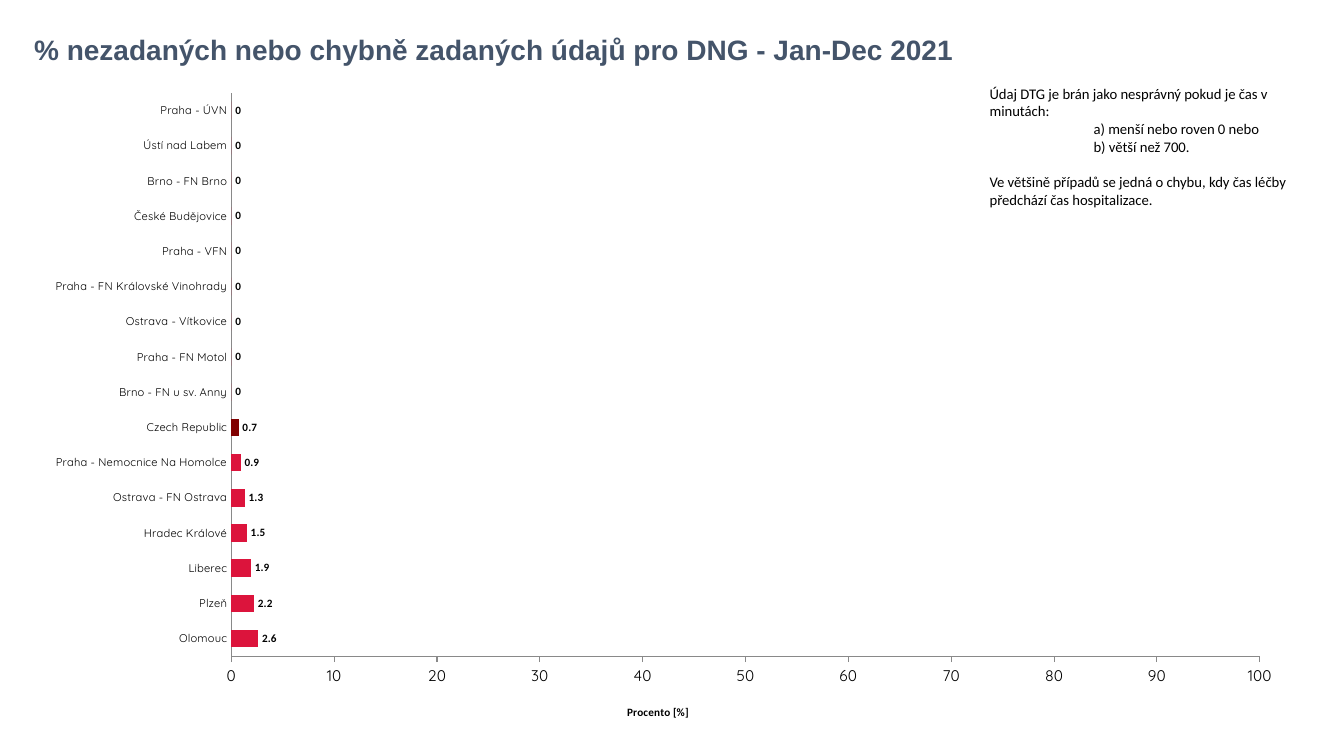
from lxml.etree import SubElement
from pptx import Presentation
from pptx.chart.data import CategoryChartData
from pptx.dml.color import RGBColor
from pptx.enum.chart import XL_CHART_TYPE, XL_LABEL_POSITION, XL_TICK_MARK
from pptx.enum.text import MSO_ANCHOR
from pptx.oxml.ns import qn
from pptx.util import Cm, Pt

RATES = [
    ("Olomouc", 2.6),
    ("Plzeň", 2.2),
    ("Liberec", 1.9),
    ("Hradec Králové", 1.5),
    ("Ostrava - FN Ostrava", 1.3),
    ("Praha - Nemocnice Na Homolce", 0.9),
    ("Czech Republic", 0.7),
    ("Brno - FN u sv. Anny", 0),
    ("Praha - FN Motol", 0),
    ("Ostrava - Vítkovice", 0),
    ("Praha - FN Královské Vinohrady", 0),
    ("Praha - VFN", 0),
    ("České Budějovice", 0),
    ("Brno - FN Brno", 0),
    ("Ústí nad Labem", 0),
    ("Praha - ÚVN", 0),
]
NOTES = [
    ("Údaj DTG je brán jako nesprávný pokud je čas v minutách:", 0, 0),
    ("a) menší nebo roven 0 nebo", 2.62, 0),
    ("b) větší než 700.", 2.62, 0),
    ("Ve většině případů se jedná o chybu, kdy čas léčby předchází čas hospitalizace.", 0, 12.6),
]


def color(code):
    return RGBColor.from_string(code)


def style(font, name, size, code="000000", bold=False):
    font.name, font.size, font.bold = name, Pt(size), bold
    font.color.rgb = color(code)


def place(owner, index, **sizes):
    layout = owner.find(qn("c:layout"))
    if layout is None:
        layout = SubElement(owner, qn("c:layout"))
        owner.insert(index, layout)
    manual = SubElement(layout, qn("c:manualLayout"))
    if "w" in sizes:
        SubElement(manual, qn("c:layoutTarget")).set("val", "inner")
    for axis in "xy":
        SubElement(manual, qn(f"c:{axis}Mode")).set("val", "edge")
    for key, value in sizes.items():
        SubElement(manual, qn(f"c:{key}")).set("val", str(value))


def add_title(slide, box):
    frame = slide.shapes.add_textbox(*box).text_frame
    frame.word_wrap = True
    frame.vertical_anchor = MSO_ANCHOR.MIDDLE
    frame.text = "% nezadaných nebo chybně zadaných údajů pro DNG - Jan-Dec 2021"
    line = frame.paragraphs[0]
    line.line_spacing = 0.9
    style(line.runs[0].font, "Arial", 20, "44546A", True)


def add_rates(slide, box):
    data = CategoryChartData()
    data.categories = [name for name, rate in RATES]
    data.add_series("Series 1", [rate for name, rate in RATES])
    chart = slide.shapes.add_chart(XL_CHART_TYPE.BAR_CLUSTERED, *box, data).chart
    chart.has_legend = chart.has_title = False
    style(chart.font, "Calibri", 18)
    area = chart._chartSpace.find(".//" + qn("c:plotArea"))
    place(area, 0, x=0.16, y=0.02, w=0.81, h=0.86)

    plot = chart.plots[0]
    plot.gap_width = 100
    plot.vary_by_categories = False
    bars = plot.series[0]
    bars.format.fill.solid()
    bars.format.fill.fore_color.rgb = color("4472C4")
    for i, (name, rate) in enumerate(RATES):
        fill = bars.points[i].format.fill
        fill.solid()
        fill.fore_color.rgb = color("800000" if name == "Czech Republic" else "DC143C")
    labels = bars.data_labels
    labels.show_value = True
    labels.position = XL_LABEL_POSITION.OUTSIDE_END
    style(labels.font, "Calibri", 8, bold=True)

    names, scale = chart.category_axis, chart.value_axis
    for axis, size, tick in (
        (names, 8, XL_TICK_MARK.NONE),
        (scale, 11, XL_TICK_MARK.OUTSIDE),
    ):
        axis.has_major_gridlines = False
        axis.major_tick_mark = tick
        axis.minor_tick_mark = XL_TICK_MARK.NONE
        axis.format.line.color.rgb = color("898989")
        axis.format.line.width = Pt(0.75)
        style(axis.tick_labels.font, "Quicksand", size)
    scale.minimum_scale, scale.maximum_scale, scale.major_unit = 0, 100, 10
    title = scale.axis_title
    title.text_frame.text = "Procento [%]"
    style(title.text_frame.paragraphs[0].runs[0].font, "Calibri", 8, bold=True)
    place(title._element, 1, x=0.47, y=0.95)


def add_notes(slide, box):
    frame = slide.shapes.add_textbox(*box).text_frame
    frame.word_wrap = True
    frame.text = "\n".join(text for text, indent, gap in NOTES)
    for line, (text, indent, gap) in zip(frame.paragraphs, NOTES):
        if indent:
            line._p.get_or_add_pPr().set("marL", str(Cm(indent)))
        if gap:
            line.space_before = Pt(gap)
        style(line.runs[0].font, "Calibri", 10.5)


def main():
    deck = Presentation()
    deck.slide_width, deck.slide_height = Cm(33.87), Cm(19.05)
    slide = deck.slides.add_slide(deck.slide_layouts[6])
    add_title(slide, (Cm(0.61), Cm(0.38), Cm(27.79), Cm(1.83)))
    add_rates(slide, (Cm(0.71), Cm(2.01), Cm(32), Cm(16.51)))
    add_notes(slide, (Cm(24.69), Cm(2.01), Cm(8), Cm(5)))
    deck.save("out.pptx")


if __name__ == "__main__":
    main()
